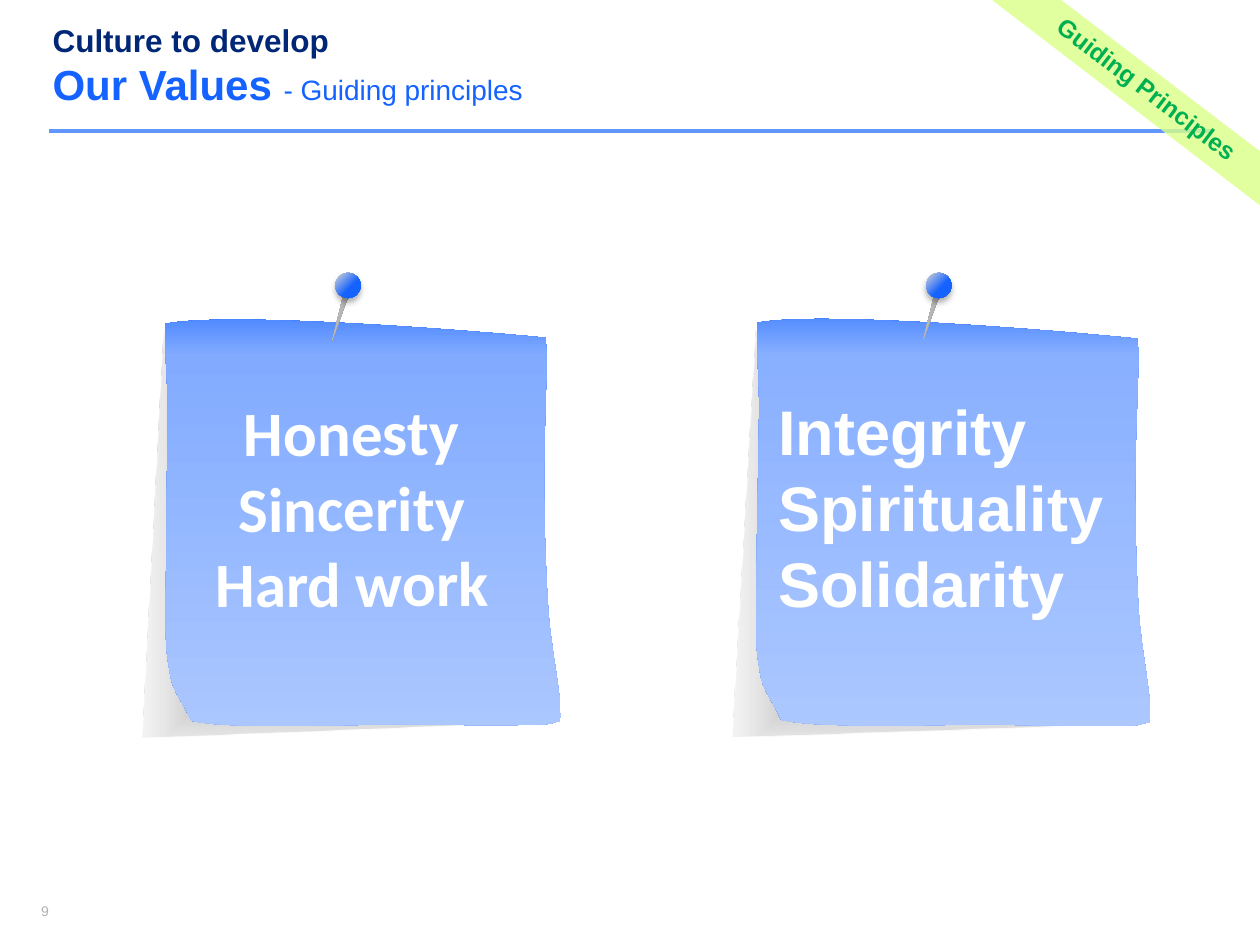
from math import cos, radians, sin

from lxml import etree
from pptx import Presentation
from pptx.dml.color import RGBColor
from pptx.enum.shapes import MSO_CONNECTOR, MSO_SHAPE
from pptx.enum.text import MSO_ANCHOR, PP_ALIGN
from pptx.oxml import parse_xml
from pptx.oxml.ns import nsdecls, qn
from pptx.util import Cm, Pt

STRAIGHT = MSO_CONNECTOR.STRAIGHT
TRIANGLE, OVAL = MSO_SHAPE.ISOSCELES_TRIANGLE, MSO_SHAPE.OVAL
TOP = MSO_ANCHOR.TOP
LEFT, CENTER = PP_ALIGN.LEFT, PP_ALIGN.CENTER

COLORS = {
    "navy": "002776", "blue": "1462FF", "rule": "6296FF", "number": "AFB1B4",
    "note_1": "82ABFF", "note_2": "89B0FF", "note_end": "B1CBFF",
    "white": "FFFFFF", "black": "000000", "dark_grey": "808080", "grey": "A6A6A6",
    "mid_grey": "B7B7B7", "light_grey": "D9D9D9", "lime": "DAFF88", "green": "00B050",
}

# Outlines in centimetres: a start, then lines (end) or curves (control, control, end).
TILT = 9.3  # the tilt at which the note outlines are measured
BACKING_FRAME = (2.67, 6.4, 9.02, 9.12)
BACKING = [
    [(3.3, 6.68)], [(2.87, 14.86)], [(11.18, 14.53)], [(10.54, 6.88)], [(3.3, 6.68)],
]
PAPER_FRAME = (2.72, 6.22, 9.17, 8.86)
PAPER = [
    [(3.33, 6.53)],
    [(4.6, 6.27), (9.7, 6.68), (11, 6.81)],
    [(11.02, 7.21), (11.02, 6.78), (11.02, 7.24)],
    [(11.02, 7.72), (10.97, 8.84), (10.97, 9.65)],
    [(10.97, 10.49), (11, 11.43), (11.05, 12.24)],
    [(11.1, 13.06), (11.35, 14.17), (11.3, 14.55)],
    [(11.07, 14.55), (11.23, 14.61), (10.77, 14.61)],
    [(10.29, 14.63), (8.53, 14.61), (8.53, 14.61)],
    [(7.39, 14.58), (4.7, 14.73), (3.86, 14.53)],
    [(3.56, 13.92), (3.48, 13.97), (3.4, 13.41)],
    [(3.3, 12.85), (3.35, 12.04), (3.35, 11.18)],
    [(3.35, 10.34), (3.38, 9.09), (3.38, 8.33)],
    [(3.38, 7.54), (3.33, 7.44), (3.33, 6.53)],
]
RIBBON_FRAME = (19.96, -0.03, 5.44, 4.17)
RIBBON = [
    [(21.39, 0)], [(25.4, 3.05)], [(25.4, 4.14)], [(19.96, -0.03)], [(21.39, 0)],
]
NOTE_GAP = 11.91


def set_alpha(color_parent, percent):
    color = color_parent.find(".//" + qn("a:srgbClr"))
    etree.SubElement(color, qn("a:alpha")).set("val", str(percent * 1000))


def to_frame(point, frame, tilt):
    """Undo a tilt about the frame's centre and measure from its corner."""
    left, top, width, height = frame
    dx, dy = point[0] - left - width / 2, point[1] - top - height / 2
    c, s = cos(radians(tilt)), sin(radians(tilt))
    return Cm(dx * c + dy * s + width / 2), Cm(dy * c - dx * s + height / 2)


class Deck:
    def __init__(self, slide, font="Arial"):
        self.s = slide
        self.font = font

    def style(self, font, size, color, bold=False, name=None):
        font.name = name or self.font
        font.size = Pt(size)
        font.bold = bold
        font.color.rgb = RGBColor.from_string(COLORS[color])

    def place(self, sp, box):
        sp.left, sp.top, sp.width, sp.height = map(Cm, box)

    def title(self, box, runs):
        sp = self.s.shapes.title
        self.place(sp, box)
        tf = sp.text_frame
        tf.margin_left = tf.margin_right = tf.margin_top = tf.margin_bottom = 0
        tf.vertical_anchor = TOP
        p = tf.paragraphs[0]
        p.alignment = LEFT
        for i, (text, *style) in enumerate(runs):
            if i == 1:
                p.add_line_break()
            r = p.add_run()
            r.text = text
            self.style(r.font, *style)

    def text(self, box, lines, *style, align=LEFT, rotation=0, wrap=True,
             margin=None, space=0):
        sp = self.s.shapes.add_textbox(*map(Cm, box))
        sp.rotation = rotation
        tf = sp.text_frame
        tf.word_wrap = wrap
        if margin is not None:
            tf.margin_left = tf.margin_right = Cm(margin)
            tf.margin_top = tf.margin_bottom = Cm(margin)
        for i, line in enumerate(lines):
            p = tf.add_paragraph() if i else tf.paragraphs[0]
            p.text = line
            p.alignment = align
            p.space_before = p.space_after = Pt(space)
            self.style(p.font, *style)

    def rule(self, x1, x2, y, color, width):
        line = self.s.shapes.add_connector(STRAIGHT, Cm(x1), Cm(y), Cm(x2), Cm(y))
        line.line.color.rgb = RGBColor.from_string(COLORS[color])
        line.line.width = Pt(width)
        etree.SubElement(line._element.spPr, qn("a:effectLst"))

    def plain(self, sp):
        sp.shadow.inherit = False
        sp.line.fill.background()
        return sp

    def outline(self, segments, frame, dx=0, tilt=0, rotation=0):
        """Add a freeform, with segments of three points made into curves."""
        local = [[to_frame(pt, frame, tilt) for pt in seg] for seg in segments]
        builder = self.s.shapes.build_freeform(*local[0][0])
        builder.add_line_segments([seg[-1] for seg in local[1:]], close=True)
        sp = self.plain(builder.convert_to_shape())
        self.place(sp, (frame[0] + dx, *frame[1:]))
        sp.rotation = rotation
        way = sp._element.spPr.find(".//" + qn("a:path"))
        way.set("w", str(sp.width))
        way.set("h", str(sp.height))
        for step, seg in zip(way, local):
            if len(seg) == 3:
                step.tag = qn("a:cubicBezTo")
            del step[:]
            for x, y in seg:
                etree.SubElement(step, qn("a:pt"), x=str(x), y=str(y))
        return sp

    def shape(self, kind, box, rotation=0):
        sp = self.plain(self.s.shapes.add_shape(kind, *map(Cm, box)))
        sp.rotation = rotation
        return sp

    def gradient(self, sp, stops, angle=0, path=None, focus=(), turn=1):
        """Fill with (percent, colour) stops, along an angle or around a focus."""
        grad = parse_xml(f'<a:gradFill {nsdecls("a")} rotWithShape="{turn}"><a:gsLst/></a:gradFill>')
        for pos, color in stops:
            gs = etree.SubElement(grad[0], qn("a:gs"), pos=str(pos * 1000))
            etree.SubElement(gs, qn("a:srgbClr"), val=COLORS[color])
        if path:
            way = etree.SubElement(grad, qn("a:path"))
            way.set("path", path)
            rect = etree.SubElement(way, qn("a:fillToRect"))
            for side, value in zip("ltrb", focus):
                rect.set(side, str(value * 1000))
        else:
            etree.SubElement(grad, qn("a:lin"), ang=str(angle * 60000), scaled="0")
        sp.fill.background()
        spPr = sp._element.spPr
        spPr.replace(spPr.find(qn("a:noFill")), grad)
        return grad

    def drop_shadow(self, sp, blur, distance, alpha):
        effects = sp._element.spPr.find(qn("a:effectLst"))
        shadow = etree.SubElement(
            effects, qn("a:outerShdw"), blurRad=str(Pt(blur)),
            dist=str(Pt(distance)), dir="5400000", rotWithShape="0")
        etree.SubElement(shadow, qn("a:srgbClr"), val=COLORS["black"])
        set_alpha(shadow, alpha)

    def note(self, dx, rotation, color, text_left, lines, font, align, text_rotation):
        backing = self.outline(BACKING, BACKING_FRAME, dx, TILT, rotation)
        grad = self.gradient(backing, [(51, "grey"), (100, "white")],
                             path="shape", focus=(50, 50, 50, 50))
        set_alpha(grad[0][-1], 0)
        paper = self.outline(PAPER, PAPER_FRAME, dx, TILT, rotation)
        self.gradient(paper, [(0, "blue"), (16, color), (100, "note_end")], 90, turn=0)
        self.text((text_left, 7.8, 7.42, 4.88), lines, 36, "white", True, font,
                  align=align, rotation=text_rotation)

    def pin(self, dx):
        needle = self.shape(TRIANGLE, (6.78 + dx, 5.97, 0.1, 0.91), 197)
        self.gradient(needle, [(0, "dark_grey"), (50, "mid_grey"), (100, "light_grey")])
        head = self.shape(OVAL, (6.76 + dx, 5.5, 0.51, 0.51))
        self.gradient(head, [(40, "blue"), (100, "light_grey")],
                      path="circle", focus=(100, 100, 0, 0))
        self.drop_shadow(head, 3.5, 2.2, 32)

    def ribbon(self, text):
        band = self.outline(RIBBON, RIBBON_FRAME)
        band.fill.solid()
        band.fill.fore_color.rgb = RGBColor.from_string(COLORS["lime"])
        set_alpha(band._element.spPr.find(qn("a:solidFill")), 80)
        self.text((20.68, 1.37, 4.9, 0.86), [text], 14, "green", True,
                  rotation=37.4, wrap=False, space=4)


def main():
    prs = Presentation()
    prs.slide_width, prs.slide_height = Cm(25.4), Cm(19.05)
    deck = Deck(prs.slides.add_slide(prs.slide_layouts[5]))
    deck.rule(0.99, 24.43, 2.64, "rule", 2.25)
    deck.text((0.83, 18.2, 1.17, 0.33), ["9"], 8, "number", margin=0)
    deck.title((1.06, 0.42, 23.39, 1.35), [
        ("Culture to develop", 18, "navy", True),
        ("Our Values ", 24, "blue", True),
        ("- Guiding principles", 16, "blue"),
    ])
    notes = [
        (9.3, "note_1", 3.38, ["Honesty", "Sincerity", "Hard work"],
         "Calibri", CENTER, 359.7),
        (9.6, "note_2", 15.44, ["Integrity Spirituality Solidarity"],
         "Arial", LEFT, 0.1),
    ]
    for i, note in enumerate(notes):
        deck.note(i * NOTE_GAP, *note)
        deck.pin(i * NOTE_GAP)
    deck.ribbon("Guiding Principles")
    prs.save("out.pptx")


if __name__ == "__main__":
    main()
